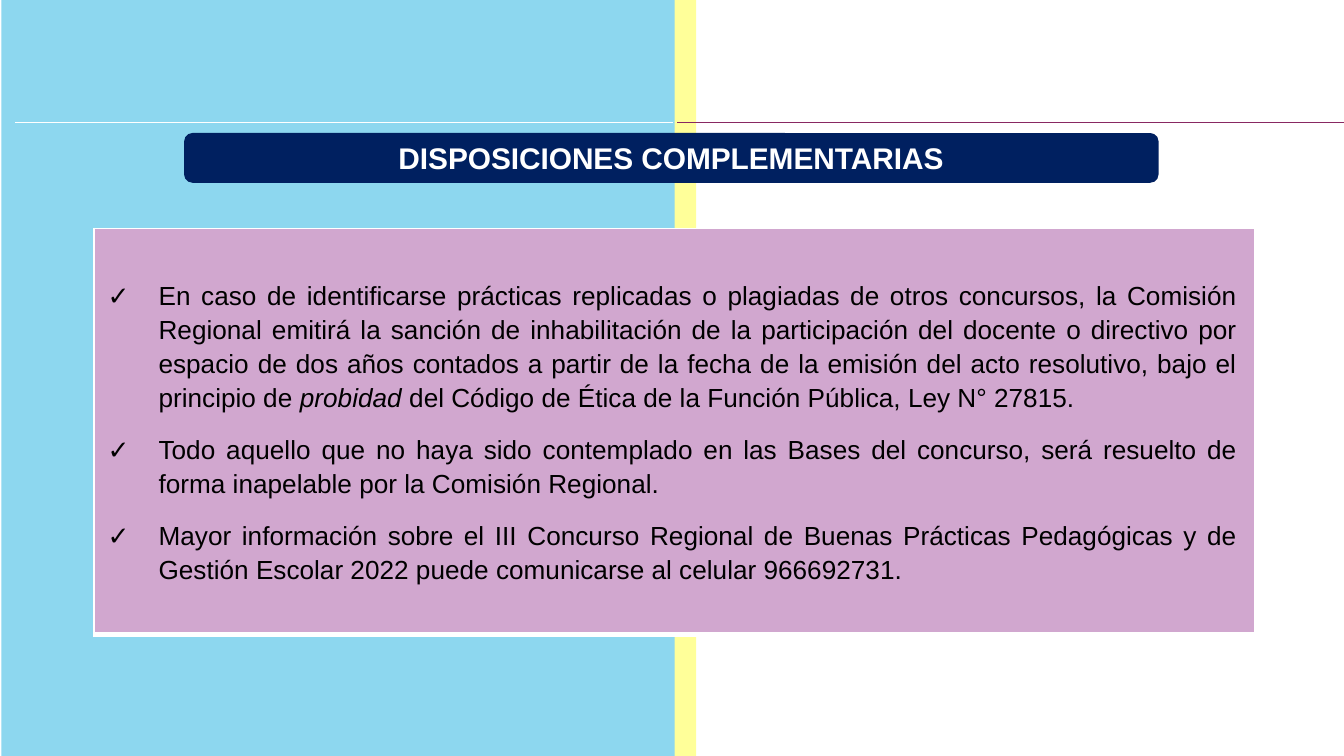
import lxml.etree
import pptx
import pptx.dml.color
import pptx.enum.shapes
import pptx.enum.text
import pptx.oxml.ns
import pptx.util

Inches = pptx.util.Inches
Pt = pptx.util.Pt
RGB = pptx.dml.color.RGBColor.from_string
ALIGN = pptx.enum.text.PP_ALIGN
MIDDLE = pptx.enum.text.MSO_ANCHOR.MIDDLE
SHAPE = pptx.enum.shapes.MSO_SHAPE

# Content: a run is (text, italic)
HEADING = [("DISPOSICIONES COMPLEMENTARIAS", False)]
PROVISIONS = [
    [("En caso de identificarse prácticas replicadas o plagiadas de otros concursos, "
      "la Comisión Regional emitirá la sanción de inhabilitación de la participación "
      "del docente o directivo por espacio de dos años contados a partir de la fecha "
      "de la emisión del acto resolutivo, bajo el principio de ", False),
     ("probidad", True),
     (" del Código de Ética de la Función Pública, Ley N° 27815.", False)],
    [("Todo aquello que no haya sido contemplado en las Bases del concurso, será "
      "resuelto de forma inapelable por la Comisión Regional.", False)],
    [("Mayor información sobre el III Concurso Regional de Buenas Prácticas "
      "Pedagógicas y de Gestión Escolar 2022 puede comunicarse al celular "
      "966692731.", False)],
]

THEME = {
    "font": "Arial", "heading_size": 16, "body_size": 14,
    "yellow": "FFFF99", "sky": "8DD7EF", "plum": "882862", "white": "FFFFFF",
    "navy": "002060", "lilac": "D1A7CF", "black": "000000",
}
WIDTH = 10
HEIGHT = WIDTH * 9 / 16  # widescreen
RULE_Y = 0.91
BORDERS = {"lnL": 1, "lnR": 1, "lnT": 1, "lnB": 3}
INDENT = 0.38


def add_child(parent, tag, **attributes):
    child = lxml.etree.SubElement(parent, pptx.oxml.ns.qn(tag))
    for name, value in attributes.items():
        child.set(name, str(value))
    return child


def add_panel(slide, kind, box, color):
    panel = slide.shapes.add_shape(kind, *map(Inches, box))
    panel.shadow.inherit = False
    panel.fill.solid()
    panel.fill.fore_color.rgb = RGB(color)
    panel.line.fill.background()
    return panel


def add_rule(slide, left, right, color):
    rule = slide.shapes.add_connector(
        pptx.enum.shapes.MSO_CONNECTOR.STRAIGHT,
        Inches(left), Inches(RULE_Y), Inches(right), Inches(RULE_Y))
    rule.line.color.rgb = RGB(color)
    rule.line.width = Pt(0.75)
    add_child(rule.element.spPr, "a:effectLst")


def write_text(paragraph, runs, *, size, color, align, bold=False,
               line_spacing=1, space_after=0, bullet=None):
    paragraph.alignment = align
    paragraph.line_spacing = line_spacing
    paragraph.space_after = Pt(space_after)
    for text, italic in runs:
        run = paragraph.add_run()
        run.text = text
        run.font.name = THEME["font"]
        run.font.size = Pt(size)
        run.font.bold = bold
        run.font.italic = italic
        run.font.color.rgb = RGB(color)
    if bullet:
        properties = paragraph._p.get_or_add_pPr()
        properties.set("marL", str(Inches(INDENT)))
        properties.set("indent", str(-Inches(INDENT)))
        add_child(add_child(properties, "a:buClr"), "a:srgbClr", val=color)
        add_child(properties, "a:buFont", typeface=THEME["font"])
        add_child(properties, "a:buChar", char=bullet)


def add_borders(cell, color):
    properties = cell._tc.get_or_add_tcPr()
    for position, (side, width) in enumerate(BORDERS.items()):
        border = add_child(properties, f"a:{side}", w=Pt(width))
        add_child(add_child(border, "a:solidFill"), "a:srgbClr", val=color)
        properties.insert(position, border)  # borders come before the fill


def main():
    deck = pptx.Presentation()
    deck.slide_width, deck.slide_height = Inches(WIDTH), Inches(HEIGHT)
    slide = deck.slides.add_slide(deck.slide_layouts[6])

    # Background bands and rules
    add_panel(slide, SHAPE.RECTANGLE, (5, 0, 0.18, HEIGHT), THEME["yellow"])
    add_panel(slide, SHAPE.RECTANGLE, (0.01, 0, 5.01, HEIGHT), THEME["sky"])
    add_rule(slide, 5.04, 10.14, THEME["plum"])
    add_rule(slide, 0.11, 5.01, THEME["white"])

    # Heading
    heading = add_panel(slide, SHAPE.ROUNDED_RECTANGLE,
                        (1.37, 0.99, 7.25, 0.37), THEME["navy"])
    heading.text_frame.vertical_anchor = MIDDLE
    heading.text_frame.word_wrap = True
    write_text(heading.text_frame.paragraphs[0], HEADING, bold=True,
               size=THEME["heading_size"], color=THEME["white"], align=ALIGN.CENTER)

    # Provisions table
    provisions = slide.shapes.add_table(
        1, 1, *map(Inches, (0.7, 1.7, 8.64, 3.02))).table
    provisions.first_row = provisions.horz_banding = False
    cell = provisions.cell(0, 0)
    cell.fill.solid()
    cell.fill.fore_color.rgb = RGB(THEME["lilac"])
    cell.vertical_anchor = MIDDLE
    cell.margin_left, cell.margin_right = Inches(0.1), Inches(0.13)
    cell.margin_top = cell.margin_bottom = 0
    add_borders(cell, THEME["white"])
    for index, provision in enumerate(PROVISIONS):
        frame = cell.text_frame
        paragraph = frame.add_paragraph() if index else frame.paragraphs[0]
        write_text(paragraph, provision, size=THEME["body_size"],
                   color=THEME["black"], align=ALIGN.JUSTIFY,
                   line_spacing=1.15, space_after=10, bullet="✓")

    deck.save("out.pptx")


if __name__ == "__main__":
    main()
